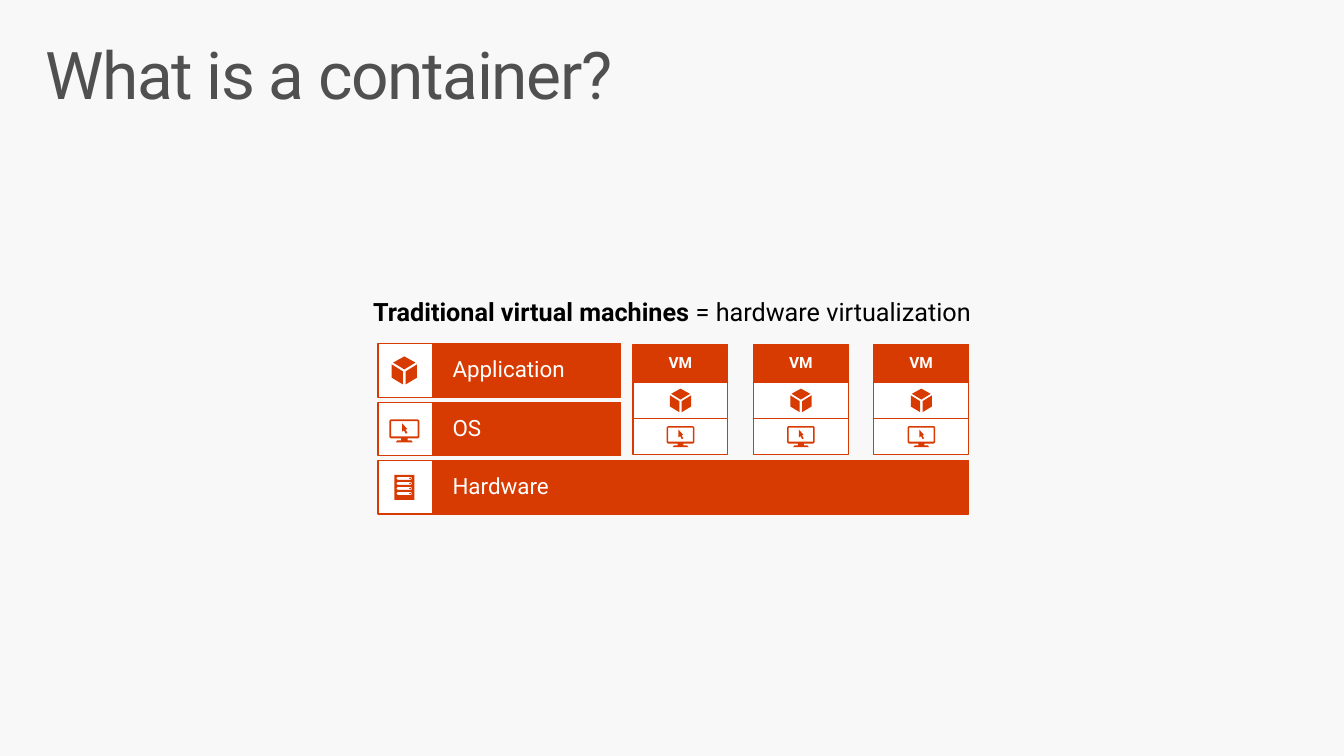
from pptx import Presentation
from pptx.dml.color import RGBColor
from pptx.enum.shapes import MSO_SHAPE
from pptx.enum.text import MSO_ANCHOR, PP_ALIGN
from pptx.util import Pt

ORANGE, WHITE = "D83B01", "FFFFFF"
rgb = RGBColor.from_string

prs = Presentation()
prs.slide_width, prs.slide_height = Pt(960), Pt(540)
s = prs.slides.add_slide(prs.slide_layouts[6])
s.background.fill.solid()
s.background.fill.fore_color.rgb = rgb("F8F8F8")


def add_box(x, y, w, h, fill, text="", size=16, inset=(14.4, 11.5), bold=False, align=PP_ALIGN.LEFT):
    sp = s.shapes.add_shape(MSO_SHAPE.RECTANGLE, Pt(x), Pt(y), Pt(w), Pt(h))
    sp.shadow.inherit = False
    sp.fill.solid()
    sp.fill.fore_color.rgb = rgb(fill)
    sp.line.color.rgb = rgb(ORANGE)
    sp.line.width = Pt(0.85)
    if text:
        tf = sp.text_frame
        tf.vertical_anchor = MSO_ANCHOR.MIDDLE
        tf.margin_left = tf.margin_right = Pt(inset[0])
        tf.margin_top = tf.margin_bottom = Pt(inset[1])
        p = tf.paragraphs[0]
        p.text = text
        p.alignment = align
        p.line_spacing = 0.9
        p.space_after = Pt(6 if bold else 0)
        p.font.name, p.font.size, p.font.bold = "Roboto", Pt(size), bold
        p.font.color.rgb = rgb(WHITE)


def add_icon(contours, x, y, scale=1):
    start = contours[0][0]
    fb = s.shapes.build_freeform(*start, scale=Pt(scale) / 10)
    for i, points in enumerate(contours):
        if i:
            fb.move_to(*points[0])
        fb.add_line_segments(points[1:], close=True)
    sp = fb.convert_to_shape(Pt(x), Pt(y))
    sp.shadow.inherit = False
    sp.fill.solid()
    sp.fill.fore_color.rgb = rgb(ORANGE)
    sp.line.fill.background()


# Icon outlines are in tenths of a point around the icon's centre.
cube = [
    [(-10, 7), (-10, 100), (-90, 52), (-90, -43)],
    [(10, 7), (10, 100), (90, 52), (90, -43)],
    [(0, -7), (-80, -56), (0, -100), (80, -56)],
]
monitor = [
    [(-97, -82), (97, -82), (107, -72), (107, 44), (97, 54), (23, 54), (23, 68), (50, 68),
     (61, 82), (-61, 82), (-50, 68), (-23, 68), (-23, 54), (-97, 54), (-107, 44), (-107, -72)],
    [(-95, -69), (-95, 40), (95, 40), (95, -69)],
    [(-16, -54), (22, -12), (8, -10), (22, 14), (10, 20), (-2, -4), (-16, 6)],
]
server = [[(-71, -90), (71, -90), (71, 90), (-71, 90)]]
for i in range(4):
    top = -75 + 36 * i
    server.append([(-46, top), (-55, top + 7), (-55, top + 15), (-46, top + 22),
                   (46, top + 22), (54, top + 15), (54, top + 7), (46, top)])

for x, y, w, h, inset, runs, size, color in [
    (20.9, 23, 918, 70.6, (11.5, 7.2, 7.2), [("What is a container?", False)], 47, "505050"),
    (0, 213.8, 960, 31, (14.4, 0, 11.5),
     [("Traditional virtual machines ", True), ("= hardware virtualization", False)], 18, "000000"),
]:
    tf = s.shapes.add_textbox(Pt(x), Pt(y), Pt(w), Pt(h)).text_frame
    tf.word_wrap = True
    tf.margin_left = tf.margin_right = Pt(inset[0])
    tf.margin_top, tf.margin_bottom = Pt(inset[1]), Pt(inset[2])
    p = tf.paragraphs[0]
    p.line_spacing = 0.9
    p.font.name, p.font.size = "Roboto", Pt(size)
    p.font.color.rgb = rgb(color)
    for text, bold in runs:
        r = p.add_run()
        r.text = text
        r.font.bold = bold
    if size == 47:
        r.font._element.set("spc", "-100")
    else:
        p.alignment = PP_ALIGN.CENTER
        p.space_after = Pt(6)

layers = [("Application", 134.6, cube, 0), ("OS", 134.6, monitor, 1.4), ("Hardware", 383, server, 0)]
for i, (name, width, icon, drop) in enumerate(layers):
    y = 245.5 + 41.76 * i
    add_box(308.9, y, width, 38.2, ORANGE, name)
    add_box(270, y, 38.9, 38.2, WHITE)
    add_icon(icon, 288.8, y + 19.1 + drop)

for i in range(4):
    sp = s.shapes.add_shape(MSO_SHAPE.OVAL, Pt(292.3), Pt(341.2 + 3.6 * i), Pt(1.4), Pt(1))
    sp.shadow.inherit = False
    sp.fill.solid()
    sp.fill.fore_color.rgb = rgb(ORANGE)
    sp.line.fill.background()

for i in range(3):
    x = 452.2 + 86 * i
    for y, icon, scale in [(272.9, cube, 0.84), (298.8, monitor, 0.92)]:
        add_box(x, y, 67.7, 25.9, WHITE)
        add_icon(icon, x + 33.9, y + 13.1, scale)
    add_box(x, 246.2, 67.7, 26.6, ORANGE, "VM", 11, (3.6, 3.6), True, PP_ALIGN.CENTER)

prs.save("out.pptx")
